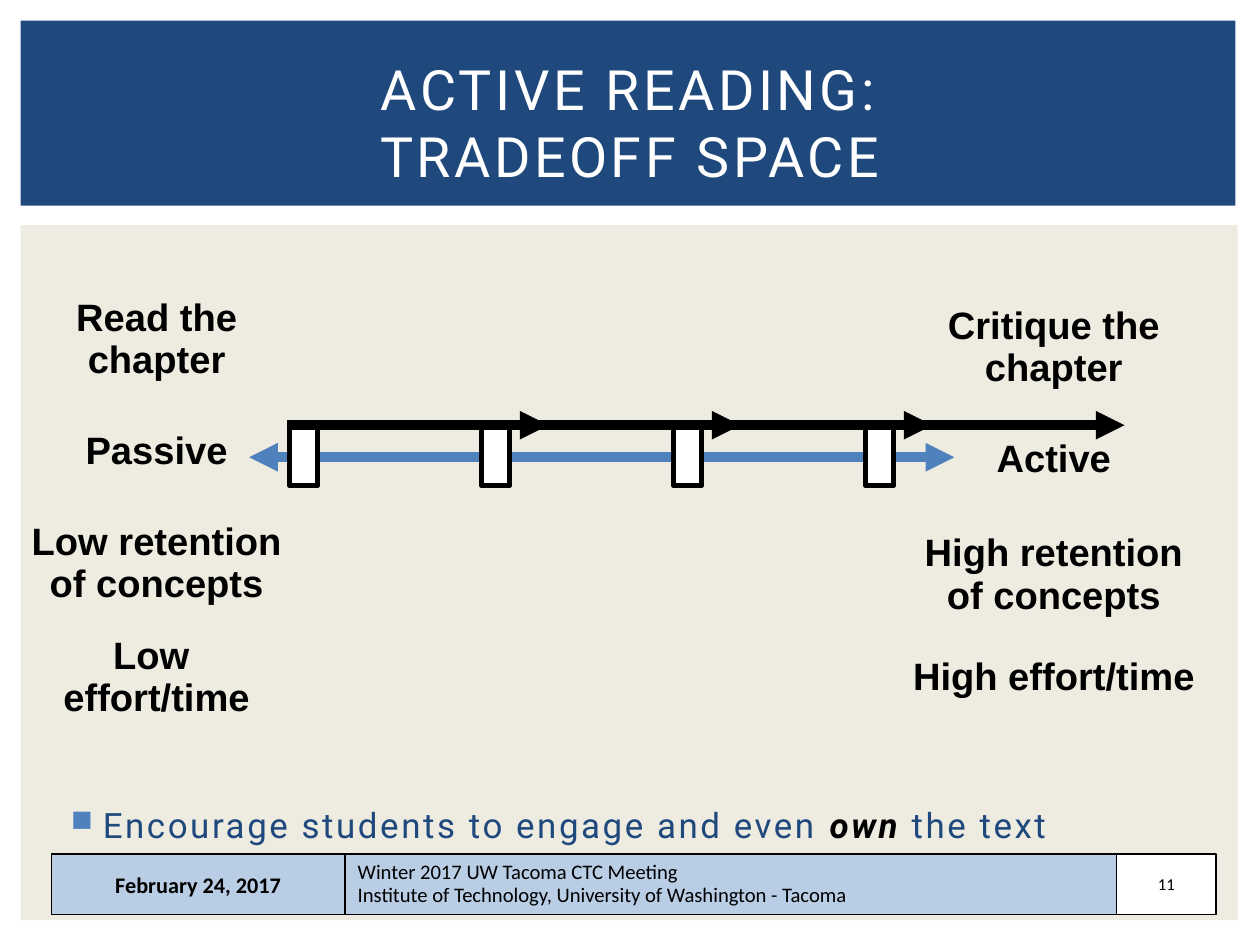
from lxml import etree
from pptx import Presentation, util as u
from pptx.dml.color import RGBColor
from pptx.enum import shapes, text
from pptx.oxml.ns import qn

WHITE = RGBColor(0xFF, 0xFF, 0xFF)
BLACK = RGBColor(0, 0, 0)
NAVY = RGBColor(0x1F, 0x49, 0x7D)
BLUE = RGBColor(0x4F, 0x81, 0xBD)
PALE_BLUE = RGBColor(0xB9, 0xCD, 0xE5)
CREAM = RGBColor(0xEE, 0xEC, 0xE1)

SLIDE_SIZE = u.Emu(10080625), u.Emu(7559675)  # 28 by 21 cm screen format
TITLE = "ACTIVE READING:\nTRADEOFF SPACE"
BULLET = [("Encourage students to engage and even ", {}),
          ("own", dict(color=BLACK, bold=True, italic=True)),
          (" the text", {})]
# Centre of each label column, then (text, top, width) down the column
LABELS = {
    1.37: [("Read the\nchapter", 2.55, 1.62), ("Passive", 3.72, 1.46),
           ("Low retention\nof concepts", 4.51, 2.41), ("Low \neffort/time", 5.51, 1.85)],
    9.22: [("Critique the\nchapter", 2.62, 2.07), ("Active", 3.79, 1.21),
           ("High retention\nof concepts", 4.61, 2.48), ("High effort/time", 5.69, 2.69)],
}
# Paragraphs, width, fill, format
FOOTER = [
    (["February 24, 2017"], 2.57, PALE_BLUE, dict(size=14, bold=True)),
    (["Winter 2017 UW Tacoma CTC Meeting",
      "Institute of Technology, University of Washington - Tacoma"],
     6.75, PALE_BLUE, dict(size=13, align="LEFT", line_spacing=0.93)),
    (["11"], 0.87, WHITE, dict(size=10.5)),
]
FOOTER_LEFT, FOOTER_TOP, FOOTER_HEIGHT = 0.45, 7.47, 0.53
STEPS, STEP_LEFT, STEP_PITCH = 4, 2.51, 1.68
STEP_TOP, STEP_WIDTH, STEP_HEIGHT, ARROW_LENGTH = 3.73, 0.25, 0.52, 2.29

presentation = Presentation()
presentation.slide_width, presentation.slide_height = SLIDE_SIZE
slide = presentation.slides.add_slide(presentation.slide_layouts[6])


def inches(*lengths):
    return [u.Inches(length) for length in lengths]


def add_run(paragraph, words, size, font="Calibri", color=BLACK, bold=False,
            italic=False, tracking=0):
    for index, line in enumerate(words.split("\n")):
        if index:
            paragraph.add_line_break()
        run = paragraph.add_run()
        run.text = line
        run.font.size, run.font.name = u.Pt(size), font
        run.font.bold, run.font.italic = bold, italic
        run.font.color.rgb = color
        if tracking:
            run.font._element.set("spc", str(round(tracking * 100)))


def write(shape, paragraphs, align="CENTER", anchor="MIDDLE", wrap=True,
          margins=(0.11, 0.06), line_spacing=None, **style):
    """Each paragraph is a string or a list of (words, style changes)."""
    frame = shape.text_frame
    frame.word_wrap = wrap
    frame.vertical_anchor = text.MSO_ANCHOR[anchor]
    frame.margin_left = frame.margin_right = u.Inches(margins[0])
    frame.margin_top = frame.margin_bottom = u.Inches(margins[1])
    for index, runs in enumerate(paragraphs):
        paragraph = frame.add_paragraph() if index else frame.paragraphs[0]
        paragraph.alignment = text.PP_ALIGN[align]
        paragraph.line_spacing = line_spacing
        for words, changes in [(runs, {})] if isinstance(runs, str) else runs:
            add_run(paragraph, words, **{**style, **changes})


def add_box(left, top, width, height, fill, line_width=0):
    box = slide.shapes.add_shape(shapes.MSO_SHAPE.RECTANGLE,
                                 *inches(left, top, width, height))
    box.shadow.inherit = False
    box.fill.solid()
    box.fill.fore_color.rgb = fill
    if line_width:
        box.line.color.rgb = BLACK
        box.line.width = u.Pt(line_width)
    else:
        box.line.fill.background()
    return box


def add_text(left, top, width, height, paragraphs, **style):
    box = slide.shapes.add_textbox(*inches(left, top, width, height))
    write(box, paragraphs, **style)
    return box


def add_arrow(start, end, y, color, ends=("tailEnd",)):
    arrow = slide.shapes.add_connector(shapes.MSO_CONNECTOR.STRAIGHT,
                                       *inches(start, y, end, y))
    arrow.line.color.rgb = color
    arrow.line.width = u.Pt(6)
    for end_name in ends:
        etree.SubElement(arrow.line._get_or_add_ln(), qn("a:" + end_name), type="triangle")
    etree.SubElement(arrow._element.spPr, qn("a:effectLst"))


def add_bullet(paragraph, color):
    properties = paragraph._p.get_or_add_pPr()
    properties.set("marL", str(u.Inches(0.33)))
    properties.set("indent", str(u.Inches(-0.28)))
    bullet_color = etree.SubElement(properties, qn("a:buClr"))
    etree.SubElement(bullet_color, qn("a:srgbClr"), val=str(color))
    etree.SubElement(properties, qn("a:buSzPct"), val="85000")
    etree.SubElement(properties, qn("a:buChar"), char="■")


add_box(0.18, 1.97, 10.65, 6.08, CREAM)
add_box(0.18, 0.18, 10.63, 1.62, NAVY)
takeaway = add_text(0.46, 2.07, 10.14, 5.33, [BULLET], align="LEFT", anchor="BOTTOM",
                    margins=(0.11, 0), size=22, font="Roboto", color=NAVY, tracking=1.65)
add_bullet(takeaway.text_frame.paragraphs[0], BLUE)

cell_left = FOOTER_LEFT
for lines, width, fill, style in FOOTER:
    cell = add_box(cell_left, FOOTER_TOP, width, FOOTER_HEIGHT, fill, line_width=1)
    write(cell, lines, **style)
    cell_left += width

add_text(0.46, 0.43, 10.1, 1.27, [TITLE], size=35, font="Roboto", color=WHITE, tracking=2.2)
add_arrow(2.18, 8.35, 4, BLUE, ends=("headEnd", "tailEnd"))

for center, labels in LABELS.items():
    for words, top, width in labels:
        height = 0.85 if "\n" in words else 0.48
        add_text(center - width / 2, top, width, height, [words], anchor="TOP", wrap=False,
                 margins=(0.1, 0.05), line_spacing=0.93, size=24, font="Arial", bold=True)

for step in range(STEPS):
    left = STEP_LEFT + step * STEP_PITCH
    add_box(left + 0.02, STEP_TOP, STEP_WIDTH, STEP_HEIGHT, WHITE, line_width=3)
    add_arrow(left, left + ARROW_LENGTH, STEP_TOP - 0.01, BLACK)

presentation.save("out.pptx")
